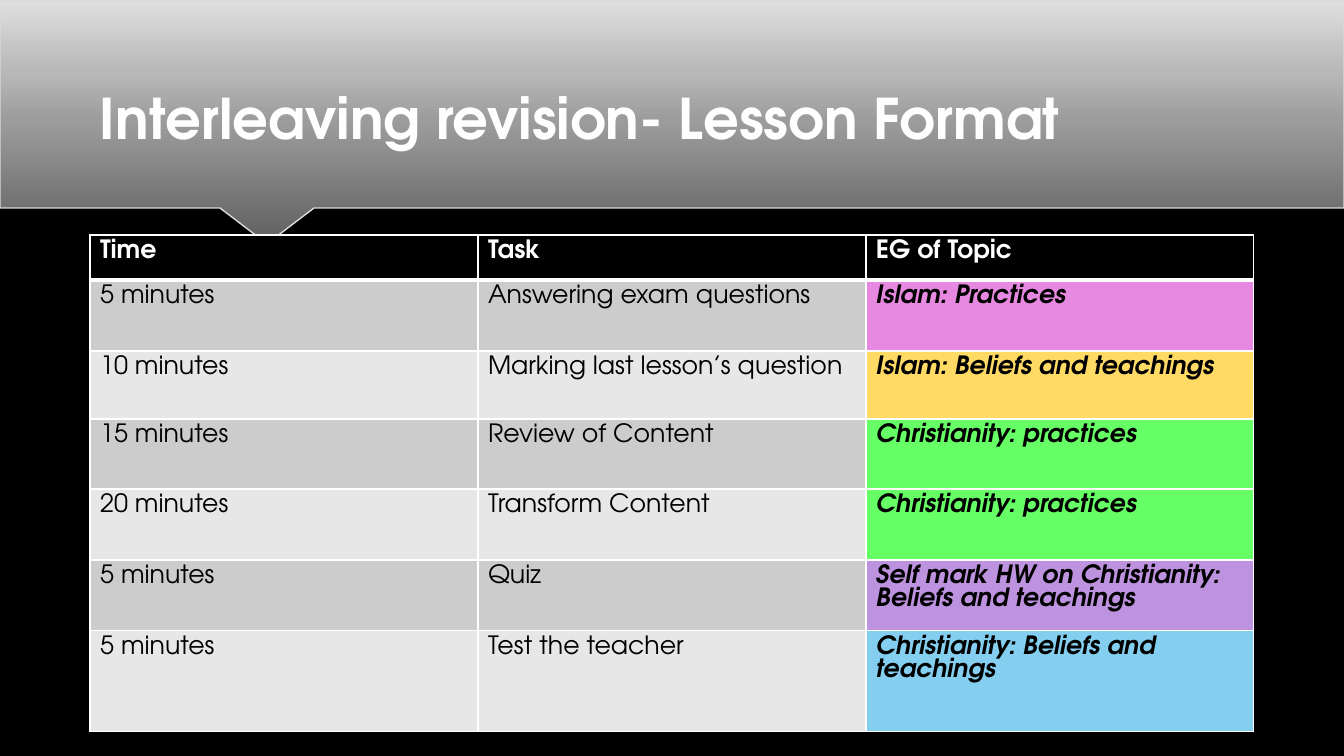
import dataclasses
import lxml.etree
import pptx
import pptx.dml.color
import pptx.enum.text
import pptx.oxml
import pptx.oxml.ns
import pptx.util

SLIDE_WIDTH, SLIDE_HEIGHT = 1344, 756
EMU_PER_PX = 12192000 / SLIDE_WIDTH


@dataclasses.dataclass(frozen=True)
class Theme:
    font: str = "TeX Gyre Adventor"
    title_size: int = 40
    table_size: int = 18
    background: str = "000000"
    title: str = "FEFEFE"
    banner_line: str = "DADADA"
    banner_stops: tuple = ((0, "616161"), (50, "9C9C9C"), (70, "B8B8B8"), (100, "DFDFDF"))
    shadow: str = "000000"
    border: str = "FFFFFF"
    header_fill: str = "000000"
    header_text: str = "FFFFFF"
    body_text: str = "000000"
    bands: tuple = ("CCCCCC", "E7E7E7")


THEME = Theme()
HEADINGS = ("Time", "Task", "EG of Topic")
LESSON = (
    ("5 minutes", "Answering exam questions", "Islam: Practices", "E789E0"),
    ("10 minutes", "Marking last lesson’s question", "Islam: Beliefs and teachings", "FFDA65"),
    ("15 minutes", "Review of Content", "Christianity: practices", "66FF66"),
    ("20 minutes", "Transform Content", "Christianity: practices", "66FF66"),
    ("5 minutes", "Quiz", "Self mark HW on Christianity: Beliefs and teachings", "BD92DE"),
    ("5 minutes", "Test the teacher", "Christianity: Beliefs and teachings", "84CFF0"),
)
ROW_HEIGHTS = (45, 71, 68, 70, 71, 70, 101)


def px(length):
    return pptx.util.Emu(round(length * EMU_PER_PX))


def rgb(colour):
    return pptx.dml.color.RGBColor.from_string(colour)


def add_xml(parent, tag, **attributes):
    return lxml.etree.SubElement(
        parent, pptx.oxml.ns.qn(tag), {key: str(value) for key, value in attributes.items()})


def add_shadow(effects, alpha):
    shadow = add_xml(effects, "a:outerShdw", blurRad=pptx.util.Pt(4), dist=pptx.util.Pt(3),
                     dir=5400000, algn="ctr", rotWithShape=0)
    colour = add_xml(shadow, "a:srgbClr", val=THEME.shadow)
    add_xml(colour, "a:alpha", val=alpha * 1000)


def write(frame, text, colour, **formats):
    run = frame.paragraphs[0].add_run()
    run.text = text
    run.font.color.rgb = rgb(colour)
    for key, value in {"name": THEME.font, **formats}.items():
        setattr(run.font, key, value)
    return run


def draw_banner(slide, left, top, width, height):
    right, bottom = left + width, top + height
    outline = ((left, top), (left, bottom), (left + 220, bottom), (left + 262, bottom + 32),
               (left + 265, bottom + 33), (left + 269, bottom + 33), (left + 272, bottom + 32),
               (left + 314, bottom), (right, bottom))
    builder = slide.shapes.build_freeform(right, top, scale=EMU_PER_PX)
    builder.add_line_segments(outline, close=True)
    banner = builder.convert_to_shape()
    banner.fill.gradient()
    banner.fill.gradient_angle = 90
    stops = banner.element.spPr.find(".//" + pptx.oxml.ns.qn("a:gsLst"))
    stops.clear()
    for position, colour in THEME.banner_stops:
        stop = add_xml(stops, "a:gs", pos=position * 1000)
        add_xml(stop, "a:srgbClr", val=colour)
    banner.line.color.rgb = rgb(THEME.banner_line)
    banner.line.width = pptx.util.Pt(1)
    banner.shadow.inherit = False
    add_shadow(banner.element.spPr.find(pptx.oxml.ns.qn("a:effectLst")), 35)


def draw_title(slide, left, top, width, height):
    frame = slide.shapes.add_textbox(px(left), px(top), px(width), px(height)).text_frame
    frame.word_wrap = True
    frame.vertical_anchor = pptx.enum.text.MSO_ANCHOR.BOTTOM
    run = write(frame, "Interleaving revision- Lesson Format", THEME.title,
                size=pptx.util.Pt(THEME.title_size), bold=True)
    effects = pptx.oxml.parse_xml("<a:effectLst %s/>" % pptx.oxml.ns.nsdecls("a"))
    run.font.fill
    properties = run.font._element
    properties.find(pptx.oxml.ns.qn("a:solidFill")).addnext(effects)
    add_shadow(effects, 60)


def style_cell(cell, text, fill, colour, widths, **formats):
    properties = cell._tc.get_or_add_tcPr()
    for side, width in zip("LRTB", widths):
        border = add_xml(properties, "a:ln" + side, w=pptx.util.Pt(width))
        add_xml(add_xml(border, "a:solidFill"), "a:srgbClr", val=THEME.border)
    cell.fill.solid()
    cell.fill.fore_color.rgb = rgb(fill)
    write(cell.text_frame, text, colour, size=pptx.util.Pt(THEME.table_size), **formats)


def draw_lesson_table(slide, left, top, width, height):
    table = slide.shapes.add_table(len(LESSON) + 1, len(HEADINGS), px(left), px(top),
                                   px(width), px(height)).table
    table.horz_banding = False
    for column in table.columns:
        column.width = px(width / len(HEADINGS))
    for row, row_height in zip(table.rows, ROW_HEIGHTS):
        row.height = px(row_height)
    for column, heading in enumerate(HEADINGS):
        style_cell(table.cell(0, column), heading, THEME.header_fill, THEME.header_text,
                   (1, 1, 1, 3), bold=True)
    for index, (*texts, topic_fill) in enumerate(LESSON):
        band = THEME.bands[index % 2]
        widths = (1, 1, 1 if index else 3, 1)
        for column, (text, fill) in enumerate(zip(texts, (band, band, topic_fill))):
            is_topic = column == 2
            style_cell(table.cell(index + 1, column), text, fill, THEME.body_text, widths,
                       bold=is_topic, italic=is_topic)


def main():
    deck = pptx.Presentation()
    deck.slide_width, deck.slide_height = px(SLIDE_WIDTH), px(SLIDE_HEIGHT)
    slide = deck.slides.add_slide(deck.slide_layouts[6])
    slide.background.fill.solid()
    slide.background.fill.fore_color.rgb = rgb(THEME.background)
    draw_banner(slide, 0, 0, SLIDE_WIDTH, 208)
    draw_title(slide, 90, 49, 1165, 107)
    draw_lesson_table(slide, 90, 235, 1164, sum(ROW_HEIGHTS))
    deck.save("out.pptx")


if __name__ == "__main__":
    main()
